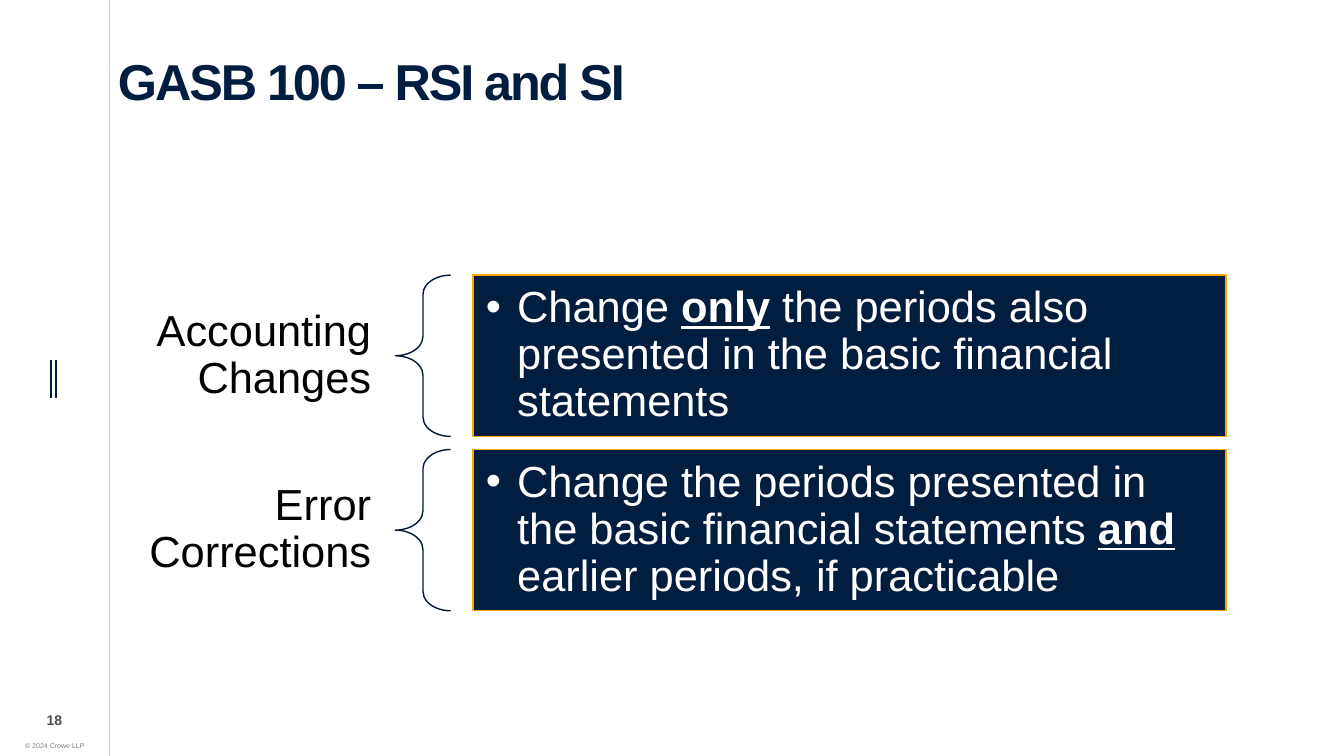
from lxml import etree
from pptx import Presentation
from pptx.dml.color import RGBColor
from pptx.enum.shapes import MSO_CONNECTOR, MSO_SHAPE
from pptx.enum.text import MSO_ANCHOR as ANCHOR, PP_ALIGN as ALIGN
from pptx.oxml.ns import qn
from pptx.util import Inches, Pt

NAVY = RGBColor(0x01, 0x1E, 0x41)
BRACE_NAVY = RGBColor(0x01, 0x18, 0x34)
GOLD = RGBColor(0xF5, 0xA8, 0x00)
WHITE = RGBColor(0xFF, 0xFF, 0xFF)
BLACK = RGBColor(0, 0, 0)
RULE_GREY = RGBColor(0xCC, 0xCC, 0xCC)
NUMBER_GREY = RGBColor(0x4D, 0x4D, 0x4D)
FOOTER_GREY = RGBColor(0x80, 0x80, 0x80)

ROW_TOP, ROW_PITCH, ROW_HEIGHT = 2.73, 1.73, 1.6
LABEL_HEIGHT = 1.07

# Label, then text before, in and after the emphasis
ROWS = [
    ("Accounting Changes",
     ("Change ", "only",
      " the periods also presented in the basic financial statements")),
    ("Error Corrections",
     ("Change the periods presented in the basic financial statements ",
      "and", " earlier periods, if practicable")),
]


def style_run(r, size, color, bold=False):
    r.font.name = "Arial"
    r.font.size = Pt(size)
    r.font.bold = bold
    r.font.color.rgb = color


def set_frame(tf, insets, anchor, wrap=True):
    tf.word_wrap = wrap
    tf.vertical_anchor = anchor
    tf.margin_left, tf.margin_top, tf.margin_right, tf.margin_bottom = map(
        Inches, insets)


def add_text(s, box, text, size, color, align, bold=False,
             insets=(0, 0, 0, 0), anchor=ANCHOR.MIDDLE, wrap=True):
    tf = s.shapes.add_textbox(*map(Inches, box)).text_frame
    set_frame(tf, insets, anchor, wrap)
    p = tf.paragraphs[0]
    p.text = text
    p.alignment = align
    style_run(p.runs[0], size, color, bold)
    return p


def add_line(s, x, top, bottom, color, width):
    line = s.shapes.add_connector(MSO_CONNECTOR.STRAIGHT, Inches(x),
                                  Inches(top), Inches(x), Inches(bottom))
    line.line.color.rgb = color
    line.line.width = Pt(width)
    etree.SubElement(line._element.spPr, qn("a:effectLst"))


def add_outlined(s, kind, box, color):
    sp = s.shapes.add_shape(kind, *map(Inches, box))
    sp.shadow.inherit = False
    sp.line.color.rgb = color
    sp.line.width = Pt(1)
    return sp


def add_bullet(p, indent):
    pPr = p._p.get_or_add_pPr()
    pPr.set("marL", str(Inches(indent)))
    pPr.set("indent", str(-Inches(indent)))
    etree.SubElement(pPr, qn("a:buFont")).set("typeface", "Arial")
    etree.SubElement(pPr, qn("a:buChar")).set("char", "•")


def add_title(s, text):
    title = s.shapes.title
    title.left, title.top, title.width, title.height = map(
        Inches, (1.17, 0.4, 11, 1.5))
    tf = title.text_frame
    set_frame(tf, (0, 0.21, 0, 0), ANCHOR.TOP)
    tf.text = text
    p = tf.paragraphs[0]
    p.alignment = ALIGN.LEFT
    p.line_spacing = 0.8
    r = p.runs[0]
    style_run(r, 36, NAVY, bold=True)
    r.font._element.set("spc", "-150")


def add_row(s, top, label, parts):
    # Label beside the brace
    label_top = top + (ROW_HEIGHT - LABEL_HEIGHT) / 2
    p = add_text(s, (1.17, label_top, 2.75, LABEL_HEIGHT), label, 31, BLACK,
                 ALIGN.RIGHT, insets=(0.24, 0.09, 0.24, 0.09))
    p.line_spacing = 0.9

    brace = add_outlined(s, MSO_SHAPE.LEFT_BRACE,
                         (3.92, top, 0.55, ROW_HEIGHT), BRACE_NAVY)
    brace.fill.background()
    brace.adjustments[0] = 0.35

    # Filled box with the bullet
    box = add_outlined(s, MSO_SHAPE.RECTANGLE,
                       (4.69, top, 7.47, ROW_HEIGHT), GOLD)
    box.fill.solid()
    box.fill.fore_color.rgb = NAVY
    set_frame(box.text_frame, (0.13, 0.13, 0.13, 0.13), ANCHOR.MIDDLE)
    p = box.text_frame.paragraphs[0]
    add_bullet(p, 0.31)
    p.alignment = ALIGN.LEFT
    p.line_spacing = 0.9
    for i, part in enumerate(parts):
        r = p.add_run()
        r.text = part
        style_run(r, 31, WHITE, bold=i == 1)
        r.font.underline = i == 1


def main():
    prs = Presentation()
    prs.slide_width, prs.slide_height = Inches(13.33), Inches(7.5)
    s = prs.slides.add_slide(prs.slide_layouts[5])

    # Left margin
    for x in (0.51, 0.56):
        add_line(s, x, 3.57, 3.95, NAVY, 1.5)
    add_line(s, 1.08, 0, 7.5, RULE_GREY, 0.5)
    add_text(s, (0.14, 7.31, 0.81, 0.19), "© 2024 Crowe LLP", 5, FOOTER_GREY,
             ALIGN.CENTER, insets=(0.1, 0.05, 0.1, 0.05), anchor=ANCHOR.TOP,
             wrap=False)
    add_text(s, (0.26, 7.02, 0.56, 0.25), "18", 10, NUMBER_GREY,
             ALIGN.CENTER, bold=True)

    # Title and rows
    add_title(s, "GASB 100 – RSI and SI")
    for i, (label, parts) in enumerate(ROWS):
        add_row(s, ROW_TOP + i * ROW_PITCH, label, parts)

    prs.save("out.pptx")


if __name__ == "__main__":
    main()
